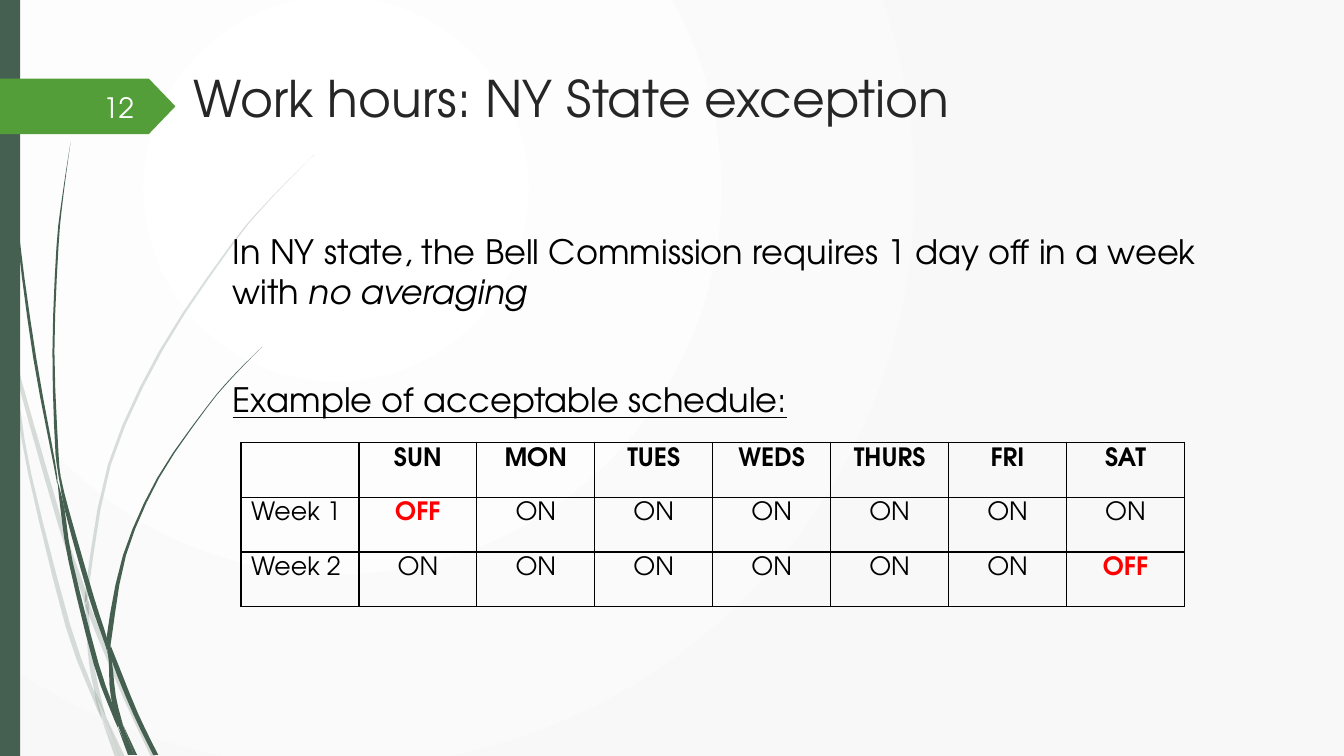
"""Build the slide on the New York State exception to work hour limits."""
from lxml import etree
from pptx import Presentation
from pptx.dml.color import RGBColor
from pptx.enum import shapes, text
from pptx.oxml.ns import qn
from pptx.util import Inches, Pt

FONT = "TeX Gyre Adventor"
COLORS = {
    "stem": "455F51", "tag": "549E39", "number": "FEFFFF", "title": "262626",
    "body": "000000", "off": "FF0000", "center": "FFFFFF", "edge": "F8F8F8",
}


def paint(shape, color):
    shape.shadow.inherit = False
    shape.fill.solid()
    shape.fill.fore_color.rgb = RGBColor.from_string(COLORS[color])
    shape.line.fill.background()


def style(para, size, color, bold=False):
    para.font.name = FONT
    para.font.size = Pt(size)
    para.font.bold = bold
    para.font.color.rgb = RGBColor.from_string(COLORS[color])


deck = Presentation()
deck.slide_width = Inches(13.33)
deck.slide_height = Inches(7.5)
page = deck.slides.add_slide(deck.slide_layouts[6])

backdrop = page.background.fill
backdrop.gradient()
for stop, color in zip(backdrop.gradient_stops, ("center", "edge")):
    stop.color.rgb = RGBColor.from_string(COLORS[color])
gradient = page.background._cSld.find(".//" + qn("a:gradFill"))
gradient.remove(gradient.find(qn("a:lin")))
glow = etree.SubElement(gradient, qn("a:path"), path="circle")
etree.SubElement(glow, qn("a:fillToRect"), l="50000", t="50000", r="100000", b="100000")

# Each blade lists its left edge x, y and its width, from top to bottom.
pale_blades = [
    [(0, 2.82, 0), (0, 2.99, 0.04), (0.11, 3.5, 0)],
    [(0.14, 3.45, 0), (0.17, 3.76, 0.04), (0.58, 5.22, 0.05), (0.8, 5.86, 0.05), (0.84, 5.99, 0)],
    [(0.88, 5.96, 0), (0.88, 6.1, 0.05), (1.23, 6.94, 0.05), (1.5, 7.51, 0.05)],
    [(1.05, 7.11, 0), (1.19, 7.51, 0.05)],
    [(0.11, 3.5, 0), (0.15, 3.9, 0.03), (0.28, 4.7, 0.03), (0.65, 6.21, 0.05),
     (0.92, 6.93, 0.04), (1.01, 7.14, 0)],
    [(0.84, 5.99, 0), (0.85, 6.08, 0.03), (0.87, 6.46, 0.04), (0.93, 6.83, 0.05), (1.05, 7.11, 0)],
    [(3.12, 1.53, 0), (2.68, 1.97, 0.01), (2.28, 2.44, 0.02), (1.58, 3.48, 0.03),
     (1.07, 4.61, 0.03), (0.85, 5.84, 0.03), (0.88, 5.96, 0)],
    [(1.01, 7.14, 0), (1.14, 7.51, 0.05)],
    [(0.85, 5.86, 0), (0.84, 5.99, 0.04), (0.88, 6.1, 0)],
    [(0.93, 6.83, 0), (0.98, 7.05, 0.05), (1.19, 7.51, 0)],
]
dark_blades = [
    [(0.03, 0, 0.01), (0.07, 1.1, 0.01), (0.17, 2.33, 0.02), (0.33, 3.55, 0.03),
     (0.53, 4.6, 0.02), (0.57, 4.81, 0)],
    [(0.6, 4.72, 0), (0.64, 5.05, 0.04), (0.88, 5.92, 0.05), (1.02, 6.33, 0.04), (1.06, 6.45, 0)],
    [(1.1, 6.41, 0), (1.11, 6.56, 0.05), (1.32, 7.08, 0.05), (1.52, 7.49, 0.05)],
    [(0.57, 4.77, 0), (0.6, 5.05, 0.04), (0.68, 5.57, 0.04), (0.93, 6.59, 0.05),
     (1.11, 7.08, 0.04), (1.17, 7.22, 0)],
    [(0.7, 1.41, 0), (0.62, 1.93, 0.01), (0.56, 2.45, 0.02), (0.52, 3.49, 0.02),
     (0.55, 4.49, 0.03), (0.6, 4.72, 0)],
    [(1.22, 7.19, 0), (1.33, 7.49, 0.03)],
    [(0.55, 4.49, 0), (0.58, 4.72, 0.02), (0.64, 5.05, 0)],
    [(2.6, 3.44, 0), (2.31, 3.73, 0.01), (2.04, 4.05, 0.01), (1.56, 4.74, 0.02),
     (1.22, 5.51, 0.03), (1.06, 6.31, 0.05), (1.1, 6.41, 0)],
    [(1.17, 7.22, 0), (1.27, 7.49, 0.04)],
    [(1.06, 6.45, 0), (1.08, 6.56, 0.03), (1.1, 6.91, 0.05), (1.22, 7.19, 0)],
    [(1.06, 6.31, 0), (1.06, 6.43, 0.04), (1.11, 6.56, 0)],
    [(1.1, 6.91, 0), (1.16, 7.17, 0.05), (1.3, 7.49, 0.03)],
]
STEPS = 3
for blade in pale_blades + dark_blades:
    knots = [blade[0], *blade, blade[-1]]
    smooth = []
    for before, start, end, after in zip(knots, knots[1:], knots[2:], knots[3:]):
        for step in range(STEPS):
            t = step / STEPS
            smooth.append([
                b + t * (c - a + t * (2 * a - 5 * b + 4 * c - d + t * (3 * b - 3 * c + d - a))) / 2
                for a, b, c, d in zip(before, start, end, after)
            ])
    smooth.append(blade[-1])
    left = [(Inches(x), Inches(y)) for x, y, width in smooth]
    right = [(Inches(x + width), Inches(y)) for x, y, width in smooth]
    outline = page.shapes.build_freeform(*left[0])
    outline.add_line_segments(left[1:] + right[:0:-1], close=True)
    leaf = outline.convert_to_shape()
    paint(leaf, "stem")
    if blade in pale_blades:
        shade = leaf.fill._xPr.find(".//" + qn("a:srgbClr"))
        etree.SubElement(shade, qn("a:alpha"), val="20000")

bar = page.shapes.add_shape(
    shapes.MSO_SHAPE.RECTANGLE, 0, 0, Inches(0.2), Inches(7.5))
paint(bar, "stem")
tag = page.shapes.add_shape(
    shapes.MSO_SHAPE.PENTAGON, 0, Inches(0.78), Inches(1.74), Inches(0.55))
tag.adjustments[0] = 0.48
paint(tag, "tag")

title = page.shapes.add_textbox(Inches(1.82), Inches(0.62), Inches(11.51), Inches(1.63))
title.text_frame.word_wrap = True
title.text_frame.text = "Work hours: NY State exception"
style(title.text_frame.paragraphs[0], 36, "title")

body = page.shapes.add_textbox(Inches(2.21), Inches(2.24), Inches(10.43), Inches(4.1))
body.text_frame.word_wrap = True
rule = body.text_frame.paragraphs[0]
rule.add_run().text = "In NY state, the Bell Commission requires 1 day off in a week with "
emphasis = rule.add_run()
emphasis.text = "no averaging"
emphasis.font.italic = True
example = body.text_frame.add_paragraph()
example.text = "Example of acceptable schedule:"
example.space_before = Pt(48)
example.font.underline = True
for para in (rule, example):
    style(para, 24, "body")

schedule = [
    ["", "SUN", "MON", "TUES", "WEDS", "THURS", "FRI", "SAT"],
    ["Week 1", "OFF"] + ["ON"] * 6,
    ["Week 2"] + ["ON"] * 6 + ["OFF"],
]
table = page.shapes.add_table(
    3, 8, Inches(2.39), Inches(4.39), Inches(9.36), Inches(1.63)).table
table.first_row = table.horz_banding = False
for i, entries in enumerate(schedule):
    for j, entry in enumerate(entries):
        cell = table.cell(i, j)
        cell.text = entry
        para = cell.text_frame.paragraphs[0]
        style(para, 18, "off" if entry == "OFF" else "body", i == 0 or entry == "OFF")
        if j:
            para.alignment = text.PP_ALIGN.CENTER
        borders = cell._tc.get_or_add_tcPr()
        for side in ("a:lnL", "a:lnR", "a:lnT", "a:lnB"):
            line = etree.SubElement(borders, qn(side), w=str(Pt(1)))
            ink = etree.SubElement(line, qn("a:solidFill"))
            etree.SubElement(ink, qn("a:srgbClr"), val=COLORS["body"])
        cell.fill.background()

number = page.shapes.add_textbox(Inches(0.58), Inches(0.86), Inches(0.85), Inches(0.4))
number.text_frame.word_wrap = True
number.text_frame.vertical_anchor = text.MSO_ANCHOR.MIDDLE
number.text_frame.text = "12"
number.text_frame.paragraphs[0].alignment = text.PP_ALIGN.RIGHT
style(number.text_frame.paragraphs[0], 20, "number")

deck.save("out.pptx")
